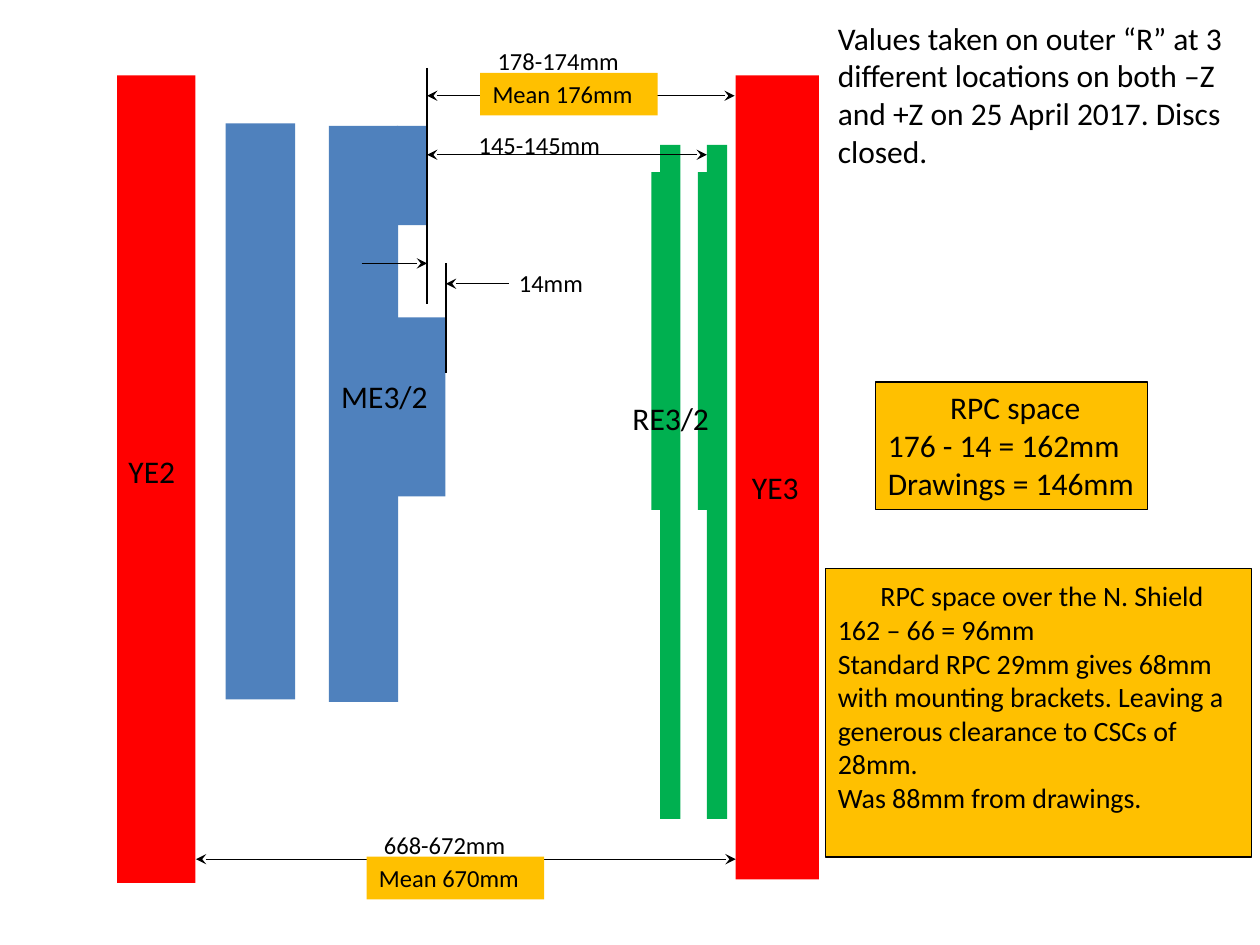
from lxml import etree
from pptx import Presentation
from pptx import util as u
from pptx.dml.color import RGBColor
from pptx.enum import shapes, text
from pptx.oxml.ns import qn

COLORS = {"yoke": "FF0000", "csc": "4F81BD", "rpc": "00B050",
          "note": "FFC000", "ink": "000000"}


def rgb(name):
    return RGBColor.from_string(COLORS[name])


def cm(*lengths):
    return [u.Cm(length) for length in lengths]


def format_run(run, size):
    run.font.name = "Calibri"
    run.font.size = u.Pt(size)
    run.font.color.rgb = rgb("ink")


def write(frame, lines, size):
    frame.word_wrap = True
    frame.auto_size = text.MSO_AUTO_SIZE.SHAPE_TO_FIT_TEXT
    frame.vertical_anchor = text.MSO_ANCHOR.TOP
    frame.text = "\n".join(lines)
    for line in frame.paragraphs:
        line.alignment = text.PP_ALIGN.LEFT
        for run in line.runs:
            format_run(run, size)


def add_plate(slide, color, *place):
    plate = slide.shapes.add_shape(shapes.MSO_SHAPE.RECTANGLE, *cm(*place))
    plate.shadow.inherit = False
    plate.fill.solid()
    plate.fill.fore_color.rgb = rgb(color)
    plate.line.fill.background()
    return plate


def add_label(slide, words, size, *place):
    label = slide.shapes.add_textbox(*cm(*place))
    write(label.text_frame, [words], size)


def add_note(slide, lines, size, *place, outlined=False):
    note = add_plate(slide, "note", *place)
    write(note.text_frame, lines, size)
    if outlined:
        note.line.color.rgb = rgb("ink")
        note.line.width = u.Pt(0.75)
        note.text_frame.paragraphs[0].alignment = text.PP_ALIGN.CENTER
    return note.text_frame


def add_line(slide, *ends, arrows=()):
    line = slide.shapes.add_connector(shapes.MSO_CONNECTOR.STRAIGHT, *cm(*ends))
    line.line.color.rgb = rgb("ink")
    line.line.width = u.Pt(0.75)
    outline = line.line._get_or_add_ln()
    for end in arrows:
        etree.SubElement(outline, qn(f"a:{end}"), type="stealth")
    etree.SubElement(line._element.spPr, qn("a:effectLst"))


def add_detector(slide):
    add_plate(slide, "yoke", 2.36, 1.52, 1.58, 16.28)
    add_plate(slide, "yoke", 14.83, 1.52, 1.68, 16.21)
    add_plate(slide, "csc", 6.63, 2.54, 1.4, 11.61)
    add_plate(slide, "csc", 8, 2.54, 0.61, 2)
    add_plate(slide, "csc", 8, 6.4, 0.98, 3.61)
    add_plate(slide, "csc", 4.55, 2.49, 1.4, 11.61)
    for chamber in (13.31, 14.25):
        add_plate(slide, "rpc", chamber, 2.92, 0.41, 13.59)
        add_plate(slide, "rpc", chamber - 0.18, 3.47, 0.23, 6.81)


def add_dimensions(slide):
    both = ("headEnd", "tailEnd")
    csc_face, shield_face = 8.61, 8.99
    add_line(slide, csc_face, 1.93, 14.81, 1.93, arrows=both)
    add_line(slide, csc_face, 3.12, 14.25, 3.12, arrows=both)
    add_line(slide, 3.95, 17.32, 14.83, 17.32, arrows=both)
    add_line(slide, csc_face, 1.37, csc_face, 6.12)
    add_line(slide, shield_face, 5.31, shield_face, 7.52)
    add_line(slide, 7.29, 5.31, csc_face, 5.31, arrows=both[1:])
    add_line(slide, 10.26, 5.72, shield_face, 5.72, arrows=both[1:])
    for words, left, top, width in (
        ("178-174mm", 9.78, 0.81, 3.05),
        ("668-672mm", 7.49, 16.61, 3.2),
        ("14mm", 10.21, 5.28, 2.24),
        ("145-145mm", 9.4, 2.49, 3.05),
    ):
        add_label(slide, words, 14, left, top, width, 0.86)
    add_note(slide, ["Mean 176mm"], 14, 9.68, 1.47, 3.58, 0.86)
    add_note(slide, ["Mean 670mm"], 14, 7.39, 17.27, 3.58, 0.86)


def add_remarks(slide):
    add_label(slide, "Values taken on outer “R” at 3 different locations on both "
              "–Z and +Z on 25 April 2017. Discs closed.",
              18, 16.64, 0.25, 8.46, 3.33)
    add_note(slide, [" RPC space", "176 - 14 = 162mm", "Drawings = 146mm"],
             18, 17.65, 7.7, 5.49, 2.57, outlined=True)
    shield = add_note(slide, [
        " ",
        "162 – 66 = 96mm",
        "Standard RPC 29mm gives 68mm with mounting brackets. "
        "Leaving a generous clearance to CSCs of 28mm.",
        "Was 88mm from drawings.",
    ], 16, 16.64, 11.46, 8.59, 5.82, outlined=True)
    heading = shield.paragraphs[0]
    format_run(heading.runs[0], 18)
    title = heading.add_run()
    title.text = "RPC space over the N. Shield"
    format_run(title, 16)


def main():
    deck = Presentation()
    deck.slide_width, deck.slide_height = cm(25.4, 19.05)
    slide = deck.slides.add_slide(deck.slide_layouts[6])
    add_detector(slide)
    add_dimensions(slide)
    add_remarks(slide)
    for words, left, top, width in (
        ("YE2", 2.34, 8.99, 1.75),
        ("YE3", 14.91, 9.32, 1.75),
        ("ME3/2", 6.63, 7.47, 2.72),
        ("RE3/2", 12.5, 7.92, 2.39),
    ):
        add_label(slide, words, 18, left, top, width, 1.02)
    deck.save("out.pptx")


if __name__ == "__main__":
    main()
